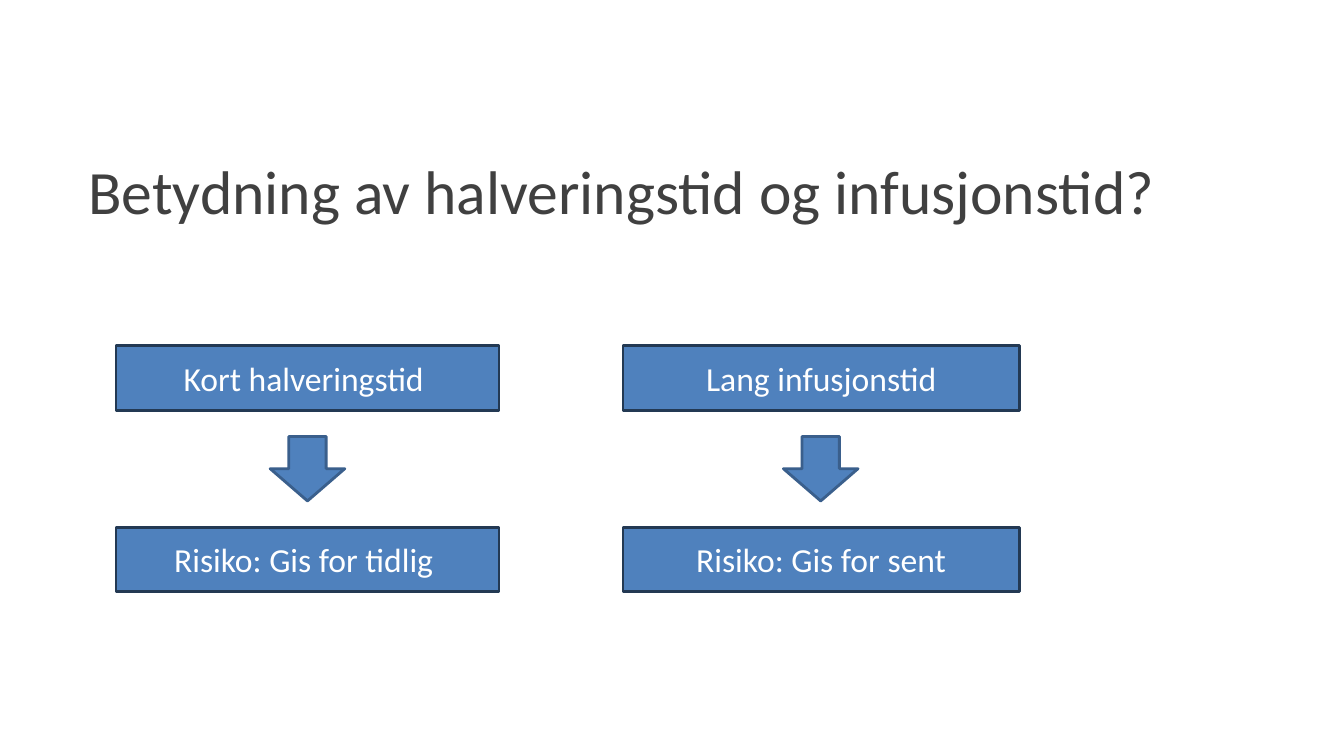
import pptx
import pptx.dml.color
import pptx.enum.shapes
import pptx.enum.text
import pptx.util

# Content
TITLE = "Betydning av halveringstid og infusjonstid?"
CHAINS = [
    {"left": 115, "width": 380, "cause": "Kort halveringstid ", "risk": "Risiko: Gis for tidlig "},
    {"left": 618, "width": 393, "cause": "Lang infusjonstid", "risk": "Risiko: Gis for sent"},
]

# Style and layout, 100 px to the inch
COLORS = {
    "title": "404040",
    "label": "FFFFFF",
    "fill": "4F81BD",
    "box_line": "233953",
    "arrow_line": "3A5F8C",
}
FONT = "Calibri"
EMU_PER_PX = 9144
ROW_TOP, ROW_STEP, ROW_HEIGHT = 343, 90, 64
ARROW_WIDTH = 74

SHAPES = pptx.enum.shapes.MSO_SHAPE
ALIGN = pptx.enum.text.PP_ALIGN


def px(*lengths):
    return [pptx.util.Emu(length * EMU_PER_PX) for length in lengths]


def rgb(name):
    return pptx.dml.color.RGBColor.from_string(COLORS[name])


def write(holder, text, *, size, color, align):
    frame = holder.text_frame
    frame.word_wrap = True
    frame.vertical_anchor = pptx.enum.text.MSO_ANCHOR.MIDDLE
    paragraph = frame.paragraphs[0]
    paragraph.alignment = align
    run = paragraph.add_run()
    run.text = text
    run.font.name = FONT
    run.font.size = pptx.util.Pt(size)
    run.font.color.rgb = rgb(color)


def draw(slide, kind, left, row, width, line):
    shape = slide.shapes.add_shape(
        kind, *px(left, ROW_TOP + row * ROW_STEP, width, ROW_HEIGHT))
    shape.shadow.inherit = False
    shape.fill.solid()
    shape.fill.fore_color.rgb = rgb("fill")
    shape.line.color.rgb = rgb(line)
    shape.line.width = pptx.util.Pt(2)
    return shape


def main():
    deck = pptx.Presentation()
    deck.slide_width, deck.slide_height = px(1333, 750)
    slide = deck.slides.add_slide(deck.slide_layouts[6])

    # Title
    heading = slide.shapes.add_textbox(*px(78, 126, 1200, 125))
    write(heading, TITLE, size=44, color="title", align=ALIGN.LEFT)

    # Cause, arrow and risk in each column
    for chain in CHAINS:
        left, width = chain["left"], chain["width"]
        for row, part in ((0, "cause"), (2, "risk")):
            box = draw(slide, SHAPES.RECTANGLE, left, row, width, "box_line")
            write(box, chain[part], size=24, color="label", align=ALIGN.CENTER)
        arrow_left = left + (width - ARROW_WIDTH) // 2
        draw(slide, SHAPES.DOWN_ARROW, arrow_left, 1, ARROW_WIDTH, "arrow_line")

    deck.save("out.pptx")


if __name__ == "__main__":
    main()
